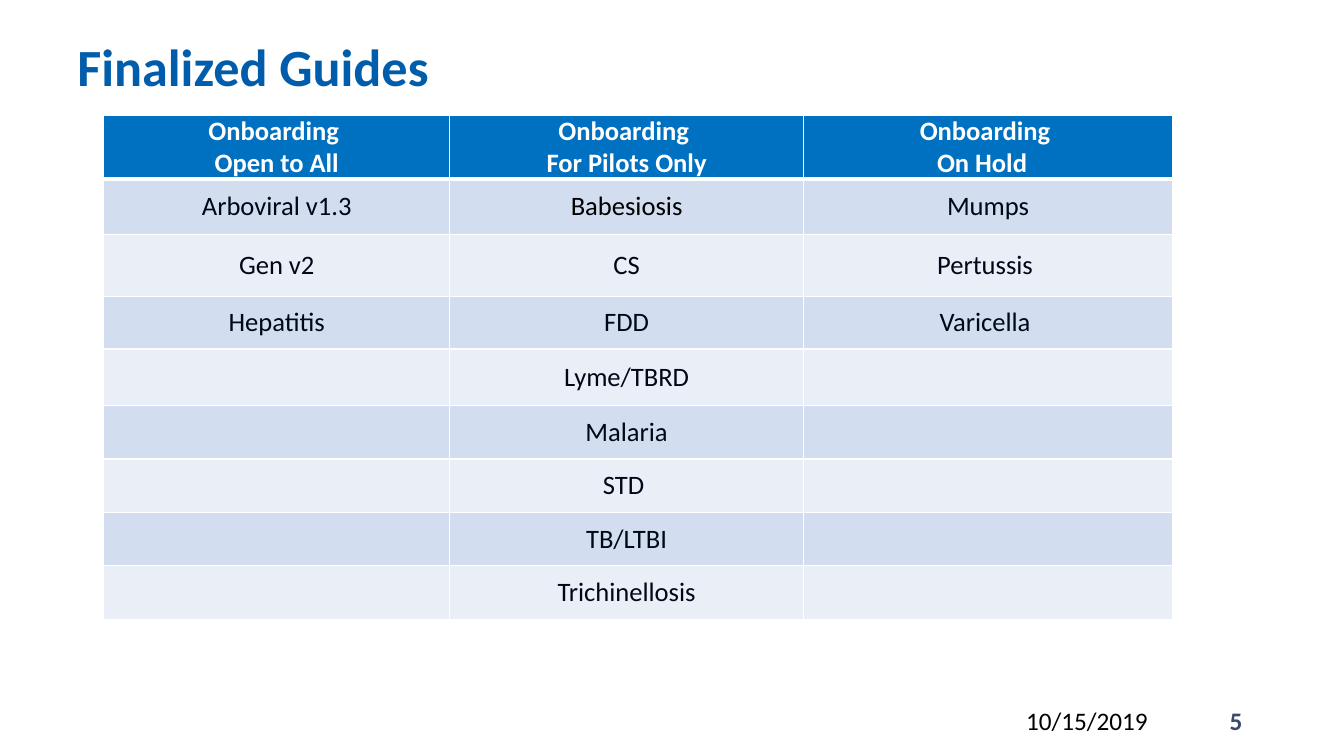
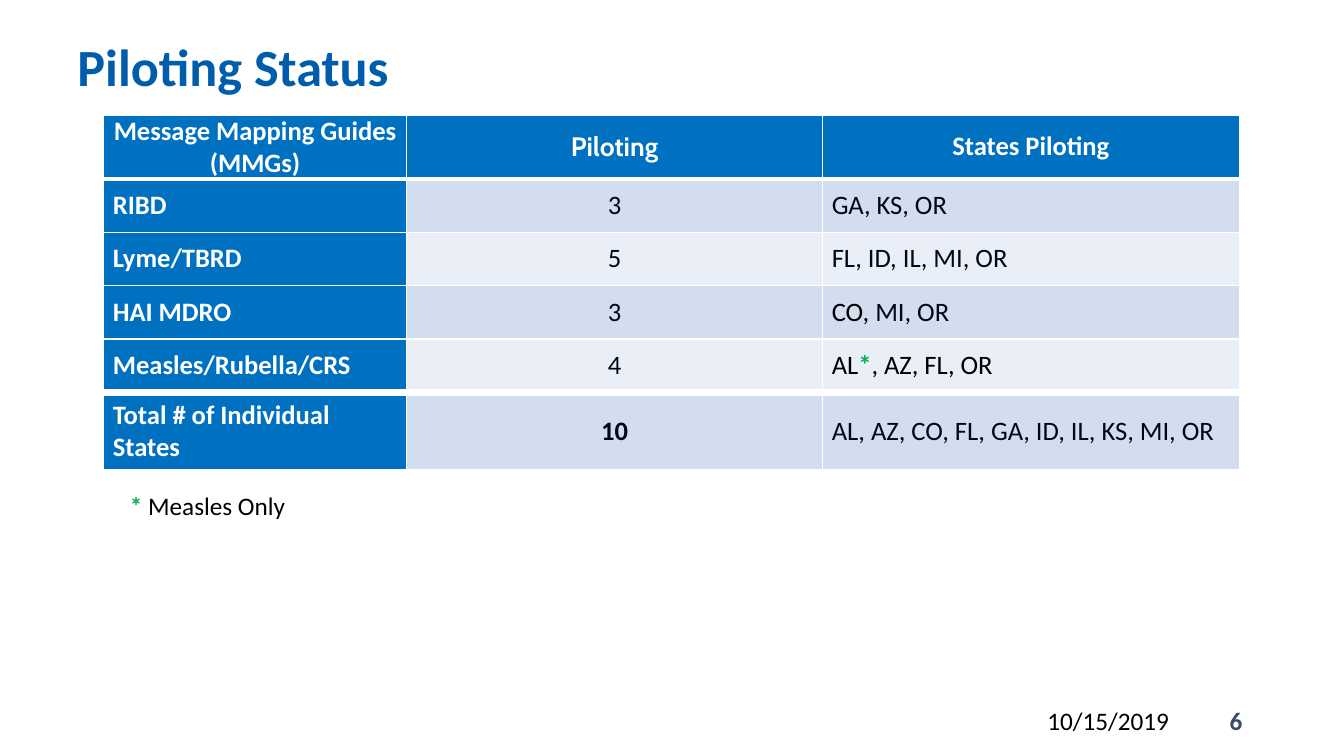
from lxml.etree import SubElement
from pptx import Presentation
from pptx.dml.color import RGBColor
from pptx.enum.text import MSO_ANCHOR, PP_ALIGN
from pptx.oxml.ns import qn
from pptx.util import Emu, Pt

PX = 9144  # 100 px to the inch
SLIDE_SIZE = (1333, 750)

# Shared look
WHITE, BLACK, INK = "FFFFFF", "000000", "000818"
HEADER_FILL = "0070C0"
BAND_FILLS = ("D2DEEF", "EAEFF7")
LEFT, CENTER, RIGHT = PP_ALIGN.LEFT, PP_ALIGN.CENTER, PP_ALIGN.RIGHT
TOP, MIDDLE, BOTTOM = MSO_ANCHOR.TOP, MSO_ANCHOR.MIDDLE, MSO_ANCHOR.BOTTOM
STYLES = {
    "title": {"size": 37.3, "color": "005DAB", "bold": True},
    "header": {"size": 19, "color": WHITE, "bold": True},
    "header alternate": {"size": 19, "color": WHITE, "bold": True, "name": "Cabin"},
    "body": {"size": 19, "color": INK},
    "body black": {"size": 19, "color": BLACK},
    "body bold": {"size": 19, "color": INK, "bold": True},
    "body mark": {"size": 19, "color": "00B050", "bold": True},
    "note": {"size": 18, "color": BLACK},
    "note mark": {"size": 18, "color": "00B050", "bold": True},
    "page": {"size": 18, "color": "3A4A6A", "bold": True},
}
TITLE_BOX = (67, 30, 1200, 71)
PAGE_BOX = (942, 695, 300, 40)
TABLE_ORIGIN = (103, 114)
DATE = "10/15/2019"

# Content: a cell is plain text or a list of (text, style) runs
SLIDES = [
    {
        "title": "Finalized Guides",
        "page": "5",
        "date left": 1008,
        "columns": (343, 351, 366),
        "rows": (60, 55, 62, 52, 56, 53, 53, 53, 53),
        "alignments": (CENTER, CENTER, CENTER),
        "header column": False,
        "heavy rules": {1: 3},
        "cells": [
            ("Onboarding \nOpen to All", "Onboarding \nFor Pilots Only",
             "Onboarding \nOn Hold  "),
            ("Arboviral v1.3", [("Babesiosis", "body black")], "Mumps"),
            ("Gen v2", "CS", "Pertussis "),
            ("Hepatitis", "FDD", "Varicella "),
            ("", "Lyme/TBRD", ""),
            ("", "Malaria", ""),
            ("", "STD ", ""),
            ("", "TB/LTBI", ""),
            ("", "Trichinellosis", ""),
        ],
    },
    {
        "title": "Piloting Status",
        "page": "6",
        "date left": 1029,
        "columns": (300, 413, 413),
        "rows": (60, 53, 53, 53, 53, 77),
        "alignments": (LEFT, CENTER, LEFT),
        "header column": True,
        "heavy rules": {1: 3, 5: 6},
        "cells": [
            ("Message Mapping Guides (MMGs)", [("Piloting", "header alternate")],
             "States Piloting"),
            ("RIBD", "3", "GA, KS, OR"),
            ("Lyme/TBRD", "5", "FL, ID, IL, MI, OR"),
            ("HAI MDRO", "3", [("CO, ", "body black"), ("MI, OR", "body")]),
            ("Measles/Rubella/CRS", "4",
             [("AL", "body black"), ("*", "body mark"), (", AZ, FL, OR", "body black")]),
            ("Total # of Individual States", [("10", "body bold")],
             "AL, AZ, CO, FL, GA, ID, IL, KS, MI, OR"),
        ],
        "footnote": [("*", "note mark"), (" Measles Only", "note")],
    },
]
FOOTNOTE_BOX = (119, 482, 189, 40)


def px(value):
    return Emu(value * PX)


def rgb(value):
    return RGBColor.from_string(value)


def format_font(font, style):
    values = {"name": "Calibri", "bold": False, **STYLES[style]}
    values["size"] = Pt(values["size"])
    font.color.rgb = rgb(values.pop("color"))
    for name, value in values.items():
        setattr(font, name, value)


def write_text(frame, content, style, alignment=LEFT):
    """Write a string, one paragraph a line, or a single line of styled runs."""
    if isinstance(content, str):
        lines = [[(line, style)] for line in content.split("\n")]
    else:
        lines = [content]
    for index, line in enumerate(lines):
        paragraph = frame.add_paragraph() if index else frame.paragraphs[0]
        paragraph.alignment = alignment
        for text, run_style in line:
            if text:
                run = paragraph.add_run()
                run.text = text
                format_font(run.font, run_style)


def add_text(slide, box, content, style, alignment=LEFT, anchor=TOP):
    frame = slide.shapes.add_textbox(*map(px, box)).text_frame
    frame.word_wrap = True
    frame.vertical_anchor = anchor
    write_text(frame, content, style, alignment)
    return frame


def set_borders(cell, top, bottom):
    properties = cell._tc.get_or_add_tcPr()
    for index, (side, width) in enumerate(
            (("L", 1), ("R", 1), ("T", top), ("B", bottom))):
        line = SubElement(properties, qn(f"a:ln{side}"), w=str(Pt(width)))
        fill = SubElement(line, qn("a:solidFill"))
        SubElement(fill, qn("a:srgbClr"), val=WHITE)
        properties.insert(index, line)  # lines come before the cell fill


def add_grid(slide, data):
    columns, rows = data["columns"], data["rows"]
    size = (sum(columns), sum(rows))
    table = slide.shapes.add_table(
        len(rows), len(columns), *map(px, TABLE_ORIGIN + size)).table
    for column, width in zip(table.columns, columns):
        column.width = px(width)
    for row, height in zip(table.rows, rows):
        row.height = px(height)

    rules = data["heavy rules"]
    for row_index, row in enumerate(data["cells"]):
        for column_index, content in enumerate(row):
            cell = table.cell(row_index, column_index)
            top_row = row_index == 0
            heading = top_row or (data["header column"] and column_index == 0)
            cell_format = {
                "vertical_anchor": MIDDLE,
                "margin_left": px(9), "margin_right": px(9),
                "margin_top": 0, "margin_bottom": 0,
            }
            for name, value in cell_format.items():
                setattr(cell, name, value)
            cell.fill.solid()
            cell.fill.fore_color.rgb = rgb(
                HEADER_FILL if heading else BAND_FILLS[(row_index - 1) % 2])
            set_borders(cell, rules.get(row_index, 1), rules.get(row_index + 1, 1))
            write_text(cell.text_frame, content, "header" if heading else "body",
                       CENTER if top_row else data["alignments"][column_index])


def build_slide(presentation, data):
    slide = presentation.slides.add_slide(presentation.slide_layouts[6])
    title = add_text(slide, TITLE_BOX, data["title"], "title", anchor=BOTTOM)
    title.paragraphs[0].line_spacing = Pt(40)
    add_grid(slide, data)
    if "footnote" in data:
        add_text(slide, FOOTNOTE_BOX, data["footnote"], "note")
    # Footer
    add_text(slide, (data["date left"], 695, 168, 40), DATE, "note")
    add_text(slide, PAGE_BOX, data["page"], "page", RIGHT, MIDDLE)


def main():
    presentation = Presentation()
    presentation.slide_width, presentation.slide_height = map(px, SLIDE_SIZE)
    for data in SLIDES:
        build_slide(presentation, data)
    presentation.save("out.pptx")


if __name__ == "__main__":
    main()
